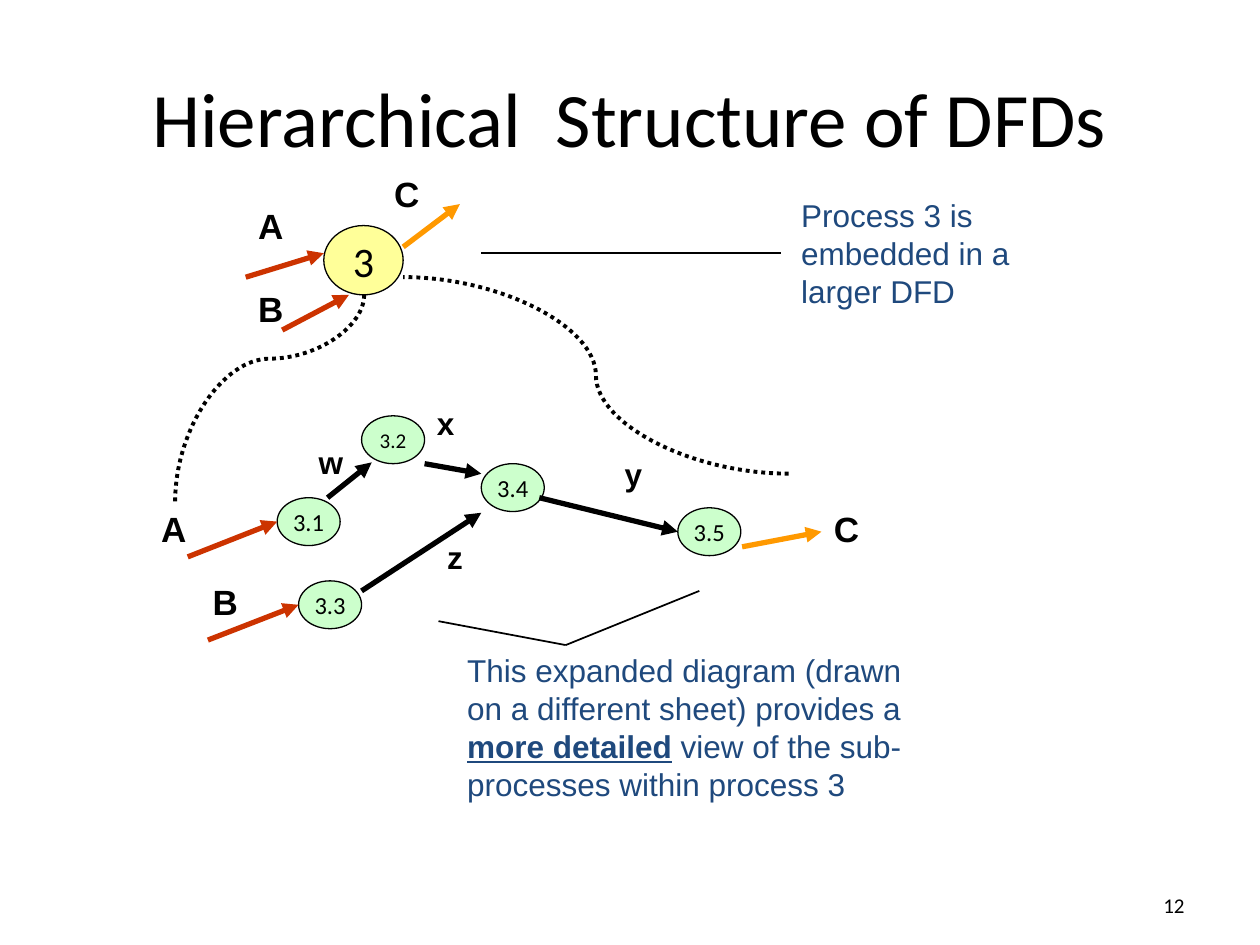
"""Build a slide on the hierarchical structure of data flow diagrams."""
from lxml.etree import SubElement
from pptx import Presentation
from pptx.dml.color import RGBColor
from pptx.enum.dml import MSO_LINE
from pptx.enum.shapes import MSO_CONNECTOR as CONN, MSO_SHAPE
from pptx.enum.text import MSO_ANCHOR as ANCHOR, MSO_AUTO_SIZE as FIT, PP_ALIGN as ALIGN
from pptx.oxml.ns import qn
from pptx.util import Inches, Pt

BLACK = RGBColor(0x00, 0x00, 0x00)
NAVY = RGBColor(0x1F, 0x49, 0x7D)
RED = RGBColor(0xCC, 0x33, 0x00)
ORANGE = RGBColor(0xFF, 0x99, 0x00)
YELLOW = RGBColor(0xFF, 0xFF, 0x99)
GREEN = RGBColor(0xCC, 0xFF, 0xCC)

prs = Presentation()
prs.slide_width, prs.slide_height = Inches(10), Inches(7.5)
COL, ROW = prs.slide_width / 100, prs.slide_height / 75
s = prs.slides.add_slide(prs.slide_layouts[5])


def grid(*lengths):
    return [int(n * (ROW if i % 2 else COL)) for i, n in enumerate(lengths)]


def write(tf, runs, size, name="Calibri", color=BLACK, align=ALIGN.LEFT, **frame):
    for key, value in frame.items():
        setattr(tf, key, value)
    p = tf.paragraphs[0]
    p.alignment = align
    for text, strong in runs:
        r = p.add_run()
        r.text = text
        font = {"name": name, "size": Pt(size), "bold": "b" in strong, "underline": "u" in strong}
        for key, value in font.items():
            setattr(r.font, key, value)
        r.font.color.rgb = color


title = s.shapes.title
title.left, title.top, title.width, title.height = grid(5, 3, 90, 12.5)
write(title.text_frame, [("Hierarchical  Structure of DFDs", "")], 44,
      align=ALIGN.CENTER, vertical_anchor=ANCHOR.MIDDLE)

number = s.shapes.add_textbox(*grid(71.7, 68.3, 23.3, 5))
write(number.text_frame, [("12", "")], 12, align=ALIGN.RIGHT,
      word_wrap=True, vertical_anchor=ANCHOR.BOTTOM)

processes = [
    ("3", 25.7, 17.9, 6.3, 5.5, YELLOW, 24),
    ("3.1", 22, 39.5, 5, 3.8, GREEN, 14),
    ("3.2", 28.7, 33, 5, 3.8, GREEN, 12),
    ("3.3", 23.7, 46.1, 5, 3.8, GREEN, 14),
    ("3.4", 38.2, 36.8, 5, 3.8, GREEN, 14),
    ("3.5", 53.8, 40.3, 5, 3.8, GREEN, 14),
]
for text, x, y, w, h, fill, size in processes:
    sp = s.shapes.add_shape(MSO_SHAPE.OVAL, *grid(x, y, w, h))
    sp.shadow.inherit = False
    sp.fill.solid()
    sp.fill.fore_color.rgb = fill
    sp.line.color.rgb = BLACK
    sp.line.width = Pt(0.75)
    write(sp.text_frame, [(text, "")], size, align=ALIGN.CENTER,
          word_wrap=False, vertical_anchor=ANCHOR.MIDDLE)

flow = {"kind": CONN.STRAIGHT, "width": 3, "arrow": True}
pointer = {"kind": CONN.STRAIGHT, "width": 1, "arrow": False}
expansion = {"kind": CONN.CURVE, "width": 2.25, "arrow": False}
lines = [
    (19.5, 22, 25.7, 20.1, RED, flow),
    (22.4, 26.2, 27.7, 23.4, RED, flow),
    (32, 19.6, 36.5, 16.2, ORANGE, flow),
    (14.9, 44.2, 22, 41.4, RED, flow),
    (16.5, 50.8, 23.7, 48, RED, flow),
    (26, 39.5, 29.5, 36.7, BLACK, flow),
    (28.7, 46.9, 38.2, 40.7, BLACK, flow),
    (33.7, 36.8, 38.2, 37.6, BLACK, flow),
    (42.8, 39.5, 53.8, 42.2, BLACK, flow),
    (58.9, 43.4, 65.2, 42.2, ORANGE, flow),
    (38.2, 20.1, 62, 20.1, BLACK, pointer),
    (44.9, 51.2, 55.5, 46.9, BLACK, pointer),
    (44.9, 51.2, 34.8, 49.3, BLACK, pointer),
    (62.6, 37.6, 32, 22, BLACK, expansion),
    (13.2, 24.1, 29.6, 39.1, BLACK, expansion),
]
for x1, y1, x2, y2, color, style in lines:
    c = s.shapes.add_connector(style["kind"], *grid(x1, y1, x2, y2))
    c.line.color.rgb = color
    c.line.width = Pt(style["width"])
    if style is expansion:
        c.line.dash_style = MSO_LINE.ROUND_DOT
    if style["arrow"]:
        SubElement(c.line._get_or_add_ln(), qn("a:tailEnd"), type="triangle")
    SubElement(c._element.spPr, qn("a:effectLst"))

left_curve = c._element.spPr
left_curve.find(qn("a:xfrm")).set("rot", str(90 * 60000))
guides = left_curve.find(qn("a:prstGeom")).find(qn("a:avLst"))
SubElement(guides, qn("a:gd"), name="adj1", fmla="val 30900")

labels = [
    ("A", 19.5, 15.7, 4, 20), ("B", 19.5, 22.3, 4, 20), ("C", 30.3, 13.2, 4, 20),
    ("A", 11.8, 39.8, 4, 20), ("B", 15.9, 45.6, 4, 20), ("C", 65.2, 39.8, 4, 20),
    ("w", 24.3, 34.7, 4, 18), ("x", 33.7, 31.6, 3.4, 18),
    ("y", 48.6, 35.6, 3.4, 18), ("z", 34.5, 42.2, 3.3, 18),
]
for text, x, y, w, size in labels:
    sp = s.shapes.add_textbox(*grid(x, y, w, 4.3 if size == 20 else 4))
    write(sp.text_frame, [(text, "b")], size, "Arial",
          word_wrap=False, auto_size=FIT.SHAPE_TO_FIT_TEXT)

notes = [
    ((62.6, 15.1, 22.6, 10), [("Process 3 is embedded in a larger DFD", "")]),
    ((36.1, 51.2, 38.3, 13), [
        ("This expanded diagram (drawn on a different sheet) provides a ", ""),
        ("more detailed", "bu"),
        (" view of the sub-processes within process 3", ""),
    ]),
]
for box, runs in notes:
    sp = s.shapes.add_textbox(*grid(*box))
    write(sp.text_frame, runs, 18, "Arial", NAVY,
          word_wrap=True, auto_size=FIT.SHAPE_TO_FIT_TEXT)

prs.save("out.pptx")
